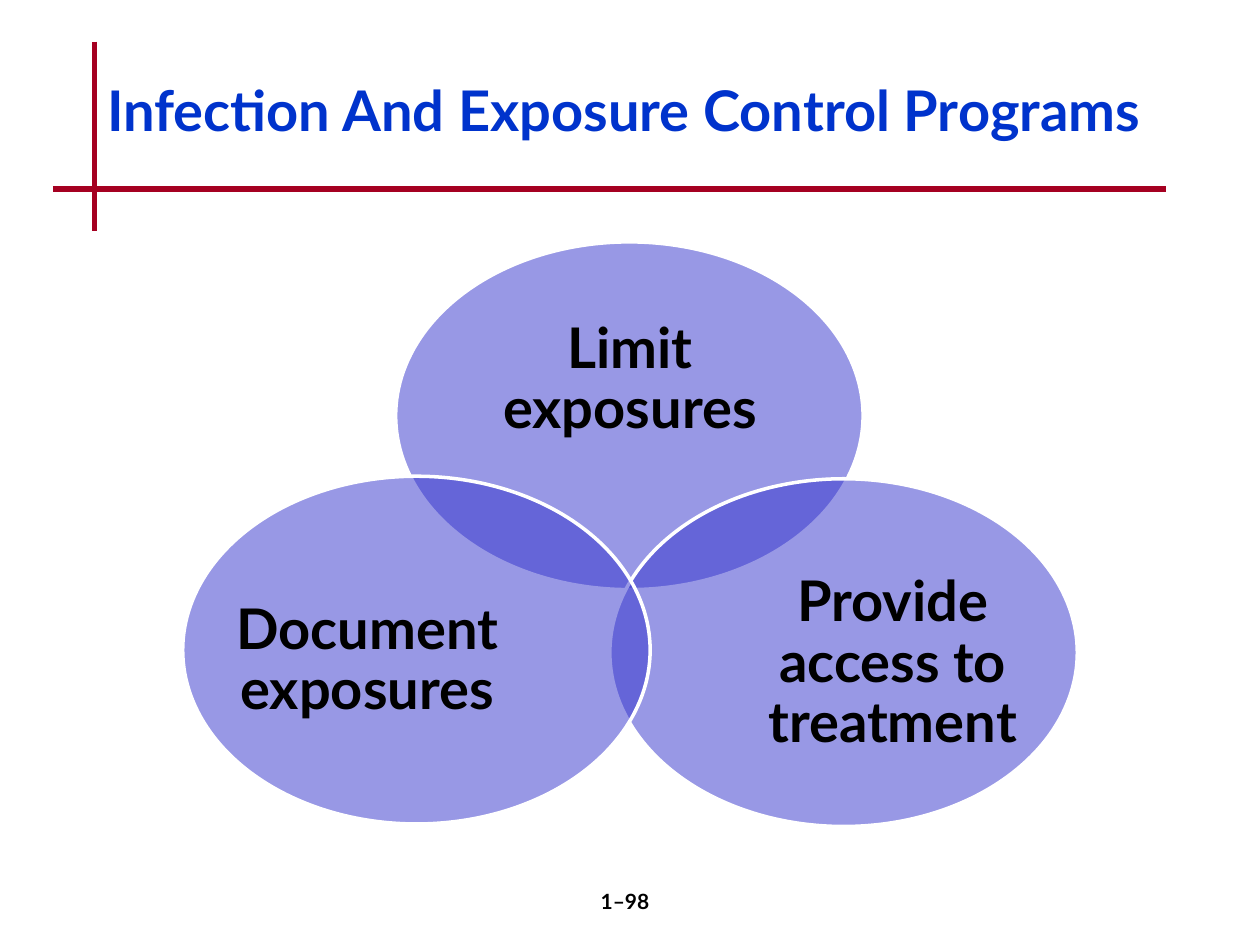
from lxml import etree
from pptx import Presentation
from pptx import util as u
from pptx.dml.color import RGBColor
from pptx.enum import shapes, text
from pptx.oxml.ns import qn


def rgb(value):
    return RGBColor.from_string(value)


class SlideBuilder:
    FONT = "Lato"
    INK, BLUE, RED, VIOLET, WHITE = "000000", "0033CC", "A50021", "3333CC", "FFFFFF"

    def __init__(self, s):
        self.s = s

    def set_text(self, tf, words, size, color, align, anchor, spacing=1.0):
        tf.word_wrap = True
        tf.auto_size = text.MSO_AUTO_SIZE.NONE
        tf.vertical_anchor = anchor
        tf.text = words
        p = tf.paragraphs[0]
        p.alignment, p.line_spacing = align, spacing
        f = p.runs[0].font
        f.name, f.size, f.bold = self.FONT, u.Pt(size), True
        f.color.rgb = rgb(color)

    def title(self, words, box):
        sp = self.s.shapes.title
        sp.left, sp.top, sp.width, sp.height = map(u.Inches, box)
        self.set_text(sp.text_frame, words, 32, self.BLUE, text.PP_ALIGN.LEFT,
                      text.MSO_ANCHOR.MIDDLE, 0.8)

    def rule(self, x1, y1, x2, y2):
        line = self.s.shapes.add_connector(
            shapes.MSO_CONNECTOR.STRAIGHT, *map(u.Inches, (x1, y1, x2, y2)))
        line.line.color.rgb = rgb(self.RED)
        line.line.width = u.Pt(3)
        etree.SubElement(line._element.spPr, qn("a:effectLst"))

    def label(self, words, box, size=32, anchor=text.MSO_ANCHOR.MIDDLE,
              inset=0.0, spacing=0.9):
        tf = self.s.shapes.add_textbox(*map(u.Inches, box)).text_frame
        tf.margin_left = tf.margin_right = u.Inches(inset)
        tf.margin_top = tf.margin_bottom = u.Inches(inset / 2)
        self.set_text(tf, words, size, self.INK, text.PP_ALIGN.CENTER, anchor, spacing)

    def ellipse(self, x, y, w=3.71, h=2.76):
        sp = self.s.shapes.add_shape(
            shapes.MSO_SHAPE.OVAL, *map(u.Inches, (x, y, w, h)))
        sp.shadow.inherit = False
        sp.fill.solid()
        sp.fill.fore_color.rgb = rgb(self.VIOLET)
        # Half transparent, so that the overlaps darken
        color = sp._element.spPr.find(qn("a:solidFill")).find(qn("a:srgbClr"))
        etree.SubElement(color, qn("a:alpha"), val="50000")
        sp.line.color.rgb = rgb(self.WHITE)
        sp.line.width = u.Pt(2)


def main():
    prs = Presentation()
    prs.slide_width, prs.slide_height = u.Inches(10), u.Inches(7.5)
    b = SlideBuilder(prs.slides.add_slide(prs.slide_layouts[5]))

    # Crossed rules, page number and title
    b.rule(0.75, 0.33, 0.75, 1.83)
    b.rule(0.42, 1.5, 9.25, 1.5)
    b.label("1–98", (3.92, 7, 2.08, 0.5), 12, text.MSO_ANCHOR.TOP, 0.1, 1.0)
    b.title("Infection And Exposure Control Programs", (0.75, 0.33, 8.67, 1.17))

    # Venn diagram: ellipse corner, label, label box
    venn = [
        ((3.14, 1.92), "Limit exposures", (3.64, 2.4, 2.72, 1.24)),
        ((4.84, 3.8), "Provide access to treatment", (5.97, 4.51, 2.23, 1.52)),
        ((1.45, 3.78), "Document exposures", (1.8, 4.49, 2.23, 1.52)),
    ]
    for corner, words, box in venn:
        b.ellipse(*corner)
        b.label(words, box)

    prs.save("out.pptx")


if __name__ == "__main__":
    main()
